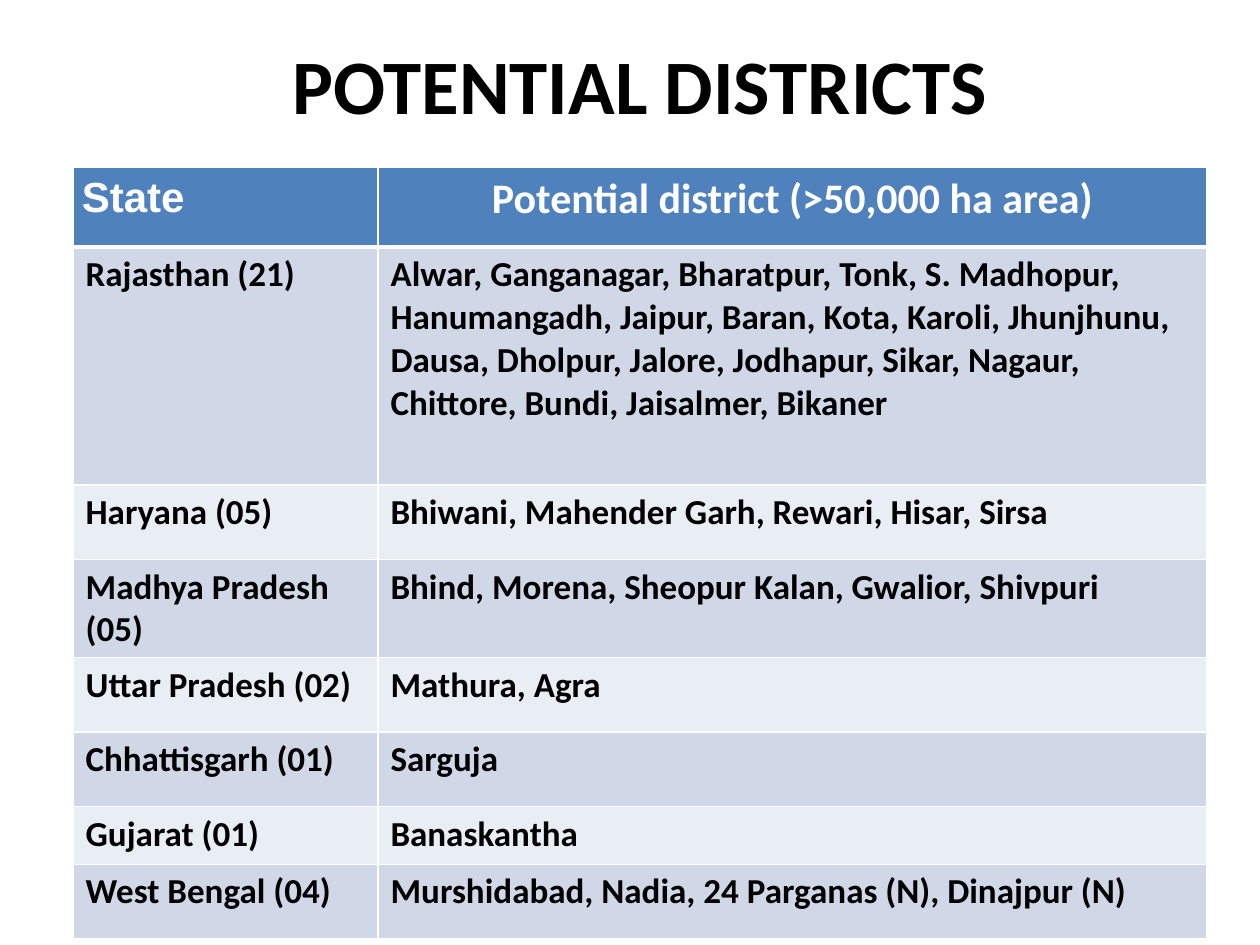
import pptx
import pptx.util
import pptx.dml.color
import pptx.enum.text
import pptx.oxml
import pptx.oxml.ns

Inches = pptx.util.Inches
Pt = pptx.util.Pt
ALIGN = pptx.enum.text.PP_ALIGN

COLORS = {"text": "000000", "white": "FFFFFF", "header": "4F81BD",
          "odd": "D0D8E8", "even": "E9EDF4"}

HEADER = ("State", "Potential district (>50,000 ha area)")
STATES = [
    ("Rajasthan (21)",
     "Alwar, Ganganagar, Bharatpur, Tonk, S. Madhopur, Hanumangadh, Jaipur, "
     "Baran, Kota, Karoli, Jhunjhunu, Dausa, Dholpur, Jalore, Jodhapur, Sikar, "
     "Nagaur, Chittore, Bundi, Jaisalmer, Bikaner"),
    ("Haryana (05)", "Bhiwani, Mahender Garh, Rewari, Hisar, Sirsa"),
    ("Madhya Pradesh (05)", "Bhind, Morena, Sheopur Kalan, Gwalior, Shivpuri"),
    ("Uttar Pradesh (02)", "Mathura, Agra"),
    ("Chhattisgarh (01)", "Sarguja"),
    ("Gujarat (01)", "Banaskantha"),
    ("West Bengal (04)", "Murshidabad, Nadia, 24 Parganas (N), Dinajpur (N)"),
]
COL_WIDTHS = (2.42, 6.58)
ROW_HEIGHTS = (0.63, 1.89, 0.59, 0.59, 0.59, 0.59, 0.46, 0.59)


class SlideBuilder:
    """Holds the style and the current slide, and adds elements to it."""

    def __init__(self, prs):
        self.font = {"name": "Calibri", "bold": True}
        self.s = prs.slides.add_slide(prs.slide_layouts[5])

    def add_text(self, tf, text, color, align=None, **font):
        p = tf.paragraphs[0]
        p.alignment = align
        r = p.add_run()
        r.text = text
        for name, value in {**self.font, **font}.items():
            setattr(r.font, name, value)
        r.font.color.rgb = pptx.dml.color.RGBColor.from_string(COLORS[color])

    def title(self, text, left, top, width, height):
        sp = self.s.shapes.title
        box = {"left": left, "top": top, "width": width, "height": height}
        for name, value in box.items():
            setattr(sp, name, Inches(value))
        sp.text_frame.vertical_anchor = pptx.enum.text.MSO_ANCHOR.MIDDLE
        self.add_text(sp.text_frame, text, "text", ALIGN.CENTER, size=Pt(44))

    def borders(self, cell, **widths):
        tcPr = cell._tc.get_or_add_tcPr()
        for side in "LRTB":
            tcPr.append(pptx.oxml.parse_xml(
                f'<a:ln{side} {pptx.oxml.ns.nsdecls("a")} w="{Pt(widths.get(side, 1))}">'
                f'<a:solidFill><a:srgbClr val="{COLORS["white"]}"/></a:solidFill>'
                f'</a:ln{side}>'))

    def fill(self, cell, color):
        cell.fill.solid()
        cell.fill.fore_color.rgb = pptx.dml.color.RGBColor.from_string(COLORS[color])

    def table(self, left, top, header, rows, widths, heights):
        table = self.s.shapes.add_table(
            len(heights), len(widths), Inches(left), Inches(top),
            Inches(sum(widths)), Inches(sum(heights))).table
        for column, width in zip(table.columns, widths):
            column.width = Inches(width)
        for row, height in zip(table.rows, heights):
            row.height = Inches(height)
        for j, text in enumerate(header):
            cell = table.cell(0, j)
            self.borders(cell, B=3)
            self.fill(cell, "header")
            self.add_text(cell.text_frame, text, "white", ALIGN.CENTER, size=Pt(24))
        for i, row in enumerate(rows, 1):
            for j, text in enumerate(row):
                cell = table.cell(i, j)
                self.borders(cell, T=3 if i == 1 else 1)
                self.fill(cell, "odd" if i % 2 else "even")
                self.add_text(cell.text_frame, text, "text", size=Pt(20))
        return table

    def label_style(self, cell):
        margins = {"margin_left": 0.07, "margin_right": 0.07,
                   "margin_top": 0, "margin_bottom": 0}
        for name, value in margins.items():
            setattr(cell, name, Inches(value))
        p = cell.text_frame.paragraphs[0]
        p.alignment = ALIGN.JUSTIFY
        p.line_spacing = 1.15
        p.runs[0].font.name = "Arial"


def main():
    prs = pptx.Presentation()
    prs.slide_width, prs.slide_height = Inches(10), Inches(7.5)
    slide = SlideBuilder(prs)
    slide.title("POTENTIAL DISTRICTS", 0.58, 0.25, 9, 0.83)
    table = slide.table(0.58, 1.33, HEADER, STATES, COL_WIDTHS, ROW_HEIGHTS)
    slide.label_style(table.cell(0, 0))
    prs.save("out.pptx")


if __name__ == "__main__":
    main()
